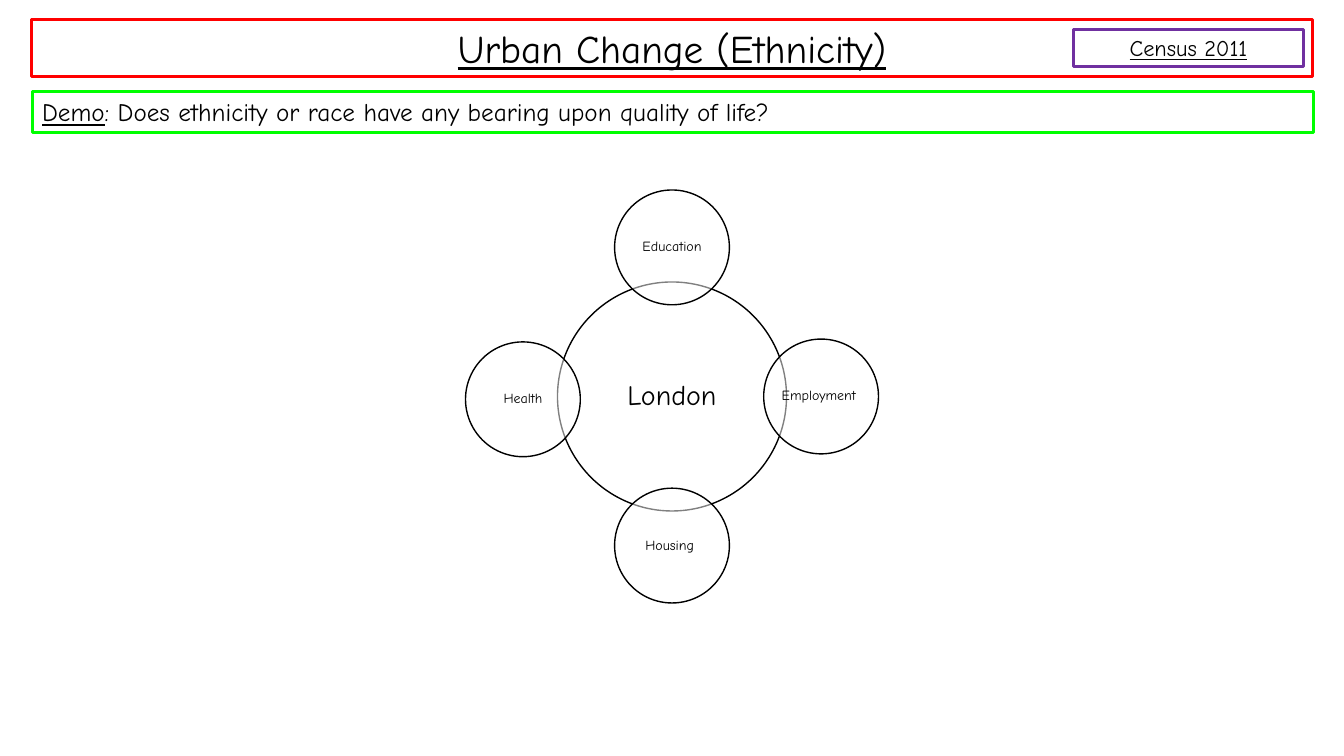
"""Build the Urban Change slide about ethnicity and quality of life in London."""
import dataclasses

import lxml.etree
import pptx
import pptx.dml.color
import pptx.enum.shapes
import pptx.enum.text
import pptx.oxml.ns
import pptx.util

Pt = pptx.util.Pt
ALIGN = pptx.enum.text.PP_ALIGN
ANCHOR = pptx.enum.text.MSO_ANCHOR
SHAPE = pptx.enum.shapes.MSO_SHAPE
FONT = "Comic Neue"
TITLE_ONLY = 5


@dataclasses.dataclass
class Frame:
    left: float
    top: float
    width: float
    height: float
    colour: str


@dataclasses.dataclass
class Circle:
    label: str
    centre_x: float
    centre_y: float
    diameter: float = 82
    size: float = 10


TITLE_FRAME = Frame(22.3, 13.7, 915.2, 41, "FF0000")
DEMO_FRAME = Frame(23, 65.5, 915.2, 29, "00FF00")
CENSUS_FRAME = Frame(766.8, 20.9, 164.2, 26.7, "7030A0")

HUB = Circle("London", 480, 283.2, 163.6, 20)
REACH = 106.5
CIRCLES = [
    HUB,
    Circle("Education", HUB.centre_x, HUB.centre_y - REACH),
    Circle("Employment ", HUB.centre_x + REACH, HUB.centre_y),
    Circle("Housing ", HUB.centre_x, HUB.centre_y + REACH),
    Circle("Health", HUB.centre_x - REACH, HUB.centre_y + 2),
]


def set_colour(colour_format, hex_colour: str) -> None:
    colour_format.rgb = pptx.dml.color.RGBColor.from_string(hex_colour)


def set_line(shape, hex_colour: str, width: float) -> None:
    shape.line.fill.solid()
    set_colour(shape.line.fill.fore_color, hex_colour)
    shape.line.width = Pt(width)


def add_text(paragraph, text: str, *, size: float, underline: bool = False,
             colour: str = "000000") -> None:
    run = paragraph.add_run()
    run.text = text
    run.font.name = FONT
    run.font.size = Pt(size)
    run.font.underline = underline
    set_colour(run.font.color, colour)


def format_text_frame(shape, *, align, anchor, wrap: bool = True):
    text_frame = shape.text_frame
    text_frame.auto_size = pptx.enum.text.MSO_AUTO_SIZE.NONE
    text_frame.word_wrap = wrap
    text_frame.vertical_anchor = anchor
    paragraph = text_frame.paragraphs[0]
    paragraph.alignment = align
    return paragraph


def place_frame(shape, frame: Frame, align):
    shape.left, shape.top = Pt(frame.left), Pt(frame.top)
    shape.width, shape.height = Pt(frame.width), Pt(frame.height)
    shape.fill.background()
    set_line(shape, frame.colour, 2.25)
    return format_text_frame(shape, align=align, anchor=ANCHOR.TOP)


def add_framed_box(slide, frame: Frame, align):
    shape = slide.shapes.add_shape(SHAPE.RECTANGLE, 0, 0, Pt(1), Pt(1))
    shape.shadow.inherit = False
    return place_frame(shape, frame, align)


def add_circle(slide, circle: Circle) -> None:
    radius = circle.diameter / 2
    shape = slide.shapes.add_shape(
        SHAPE.OVAL, Pt(circle.centre_x - radius), Pt(circle.centre_y - radius),
        Pt(circle.diameter), Pt(circle.diameter))
    shape.shadow.inherit = False
    shape.fill.solid()
    set_colour(shape.fill.fore_color, "FFFFFF")
    qualified_name = pptx.oxml.ns.qn
    fill_colour = shape.fill._xPr.find(".//" + qualified_name("a:srgbClr"))
    lxml.etree.SubElement(fill_colour, qualified_name("a:alpha"), val="50000")
    set_line(shape, "000000", 1)
    paragraph = format_text_frame(shape, align=ALIGN.CENTER, anchor=ANCHOR.MIDDLE, wrap=False)
    paragraph.line_spacing = 0.9
    add_text(paragraph, circle.label, size=circle.size)


def main() -> None:
    presentation = pptx.Presentation()
    presentation.slide_width, presentation.slide_height = Pt(960), Pt(540)
    slide = presentation.slides.add_slide(presentation.slide_layouts[TITLE_ONLY])

    title = place_frame(slide.shapes.title, TITLE_FRAME, ALIGN.CENTER)
    add_text(title, "Urban Change (Ethnicity)", size=28, underline=True)

    demo = add_framed_box(slide, DEMO_FRAME, ALIGN.LEFT)
    add_text(demo, "Demo", size=18, underline=True)
    add_text(demo, ": Does ethnicity or race have any bearing upon quality of life?", size=18)

    census = add_framed_box(slide, CENSUS_FRAME, ALIGN.CENTER)
    add_text(census, "Census 2011", size=16, underline=True)

    for circle in CIRCLES:
        add_circle(slide, circle)

    presentation.save("out.pptx")


if __name__ == "__main__":
    main()
